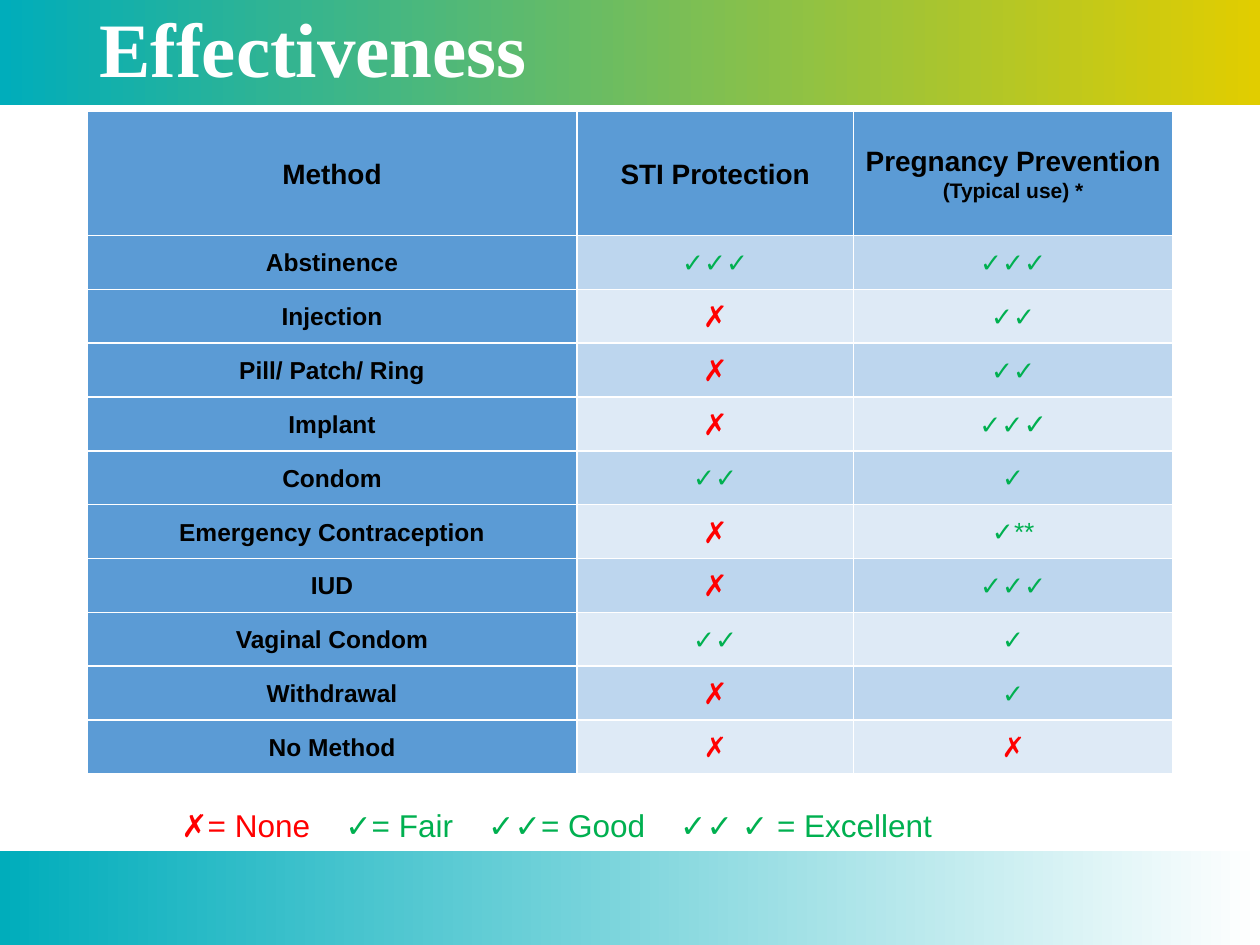
"""Build the Effectiveness slide: a table of methods rated by check marks and crosses."""
from dataclasses import dataclass

from lxml.etree import SubElement
from pptx import Presentation
from pptx.dml.color import RGBColor
from pptx.enum.shapes import MSO_SHAPE
from pptx.enum.text import MSO_ANCHOR, PP_ALIGN
from pptx.oxml.ns import qn
from pptx.slide import Slide
from pptx.table import _Cell as Cell
from pptx.text.text import _Paragraph as Paragraph
from pptx.util import Pt

TEAL = RGBColor(0x00, 0xAD, 0xBB)
GOLD = RGBColor(0xE1, 0xCD, 0x00)
WHITE = RGBColor(0xFF, 0xFF, 0xFF)
BLACK = RGBColor(0x00, 0x00, 0x00)
GREEN = RGBColor(0x00, 0xB0, 0x50)
RED = RGBColor(0xFF, 0x00, 0x00)
BLUE = RGBColor(0x5B, 0x9B, 0xD5)
BANDS = (RGBColor(0xBD, 0xD6, 0xEE), RGBColor(0xDE, 0xEA, 0xF6))

SLIDE_WIDTH, SLIDE_HEIGHT = 720, 540
TABLE_LEFT, TABLE_TOP = 49.7, 63.7
COLUMN_WIDTHS = (280.1, 157.9, 182.6)
HEADER_HEIGHT, ROW_HEIGHT = 70.9, 30.78
LEGEND_TABS = (93.7, 175.4, 285.1)


@dataclass(frozen=True)
class Span:
    text: str
    size: float
    color: RGBColor = BLACK
    bold: bool = False
    font: str = "Arial"


@dataclass(frozen=True)
class Band:
    top: float
    height: float
    start: RGBColor
    end: RGBColor


@dataclass(frozen=True)
class Method:
    name: str
    protection: tuple[Span, ...]
    prevention: tuple[Span, ...]


def checks(marks: str) -> tuple[Span, ...]:
    return (Span(marks, 15, GREEN),)


def cross(size: float = 17) -> tuple[Span, ...]:
    return (Span("✗", size, RED),)


BARS = (Band(0, 60, TEAL, GOLD), Band(486, 54, TEAL, WHITE))
HEADERS = (
    (Span("Method", 16, bold=True),),
    (Span("STI Protection", 16, bold=True),),
    (Span("Pregnancy Prevention\n", 16, bold=True),
     Span("(Typical use) *", 12, bold=True)),
)
METHODS = (
    Method("Abstinence", checks("✓✓✓"), checks("✓✓✓")),
    Method("Injection", cross(), checks("✓✓")),
    Method("Pill/ Patch/ Ring", cross(), checks("✓✓")),
    Method("Implant", cross(), checks("✓✓") + (Span("✓", 16, GREEN),)),
    Method("Condom", checks("✓✓"), checks("✓")),
    Method("Emergency Contraception", cross(), checks("✓**")),
    Method("IUD", cross(), checks("✓✓✓")),
    Method("Vaginal Condom", checks("✓✓"), checks("✓")),
    Method("Withdrawal", cross(), checks("✓")),
    Method("No Method", cross(16), cross(16)),
)
LEGEND = (
    Span("✗= None\t", 18, RED),
    Span("✓= Fair\t✓✓= Good\t✓✓ ✓ = Excellent", 18, GREEN),
)


def write_spans(paragraph: Paragraph, spans: tuple[Span, ...], spacing: float) -> None:
    paragraph.line_spacing = spacing
    for span in spans:
        run = paragraph.add_run()
        run.text = span.text.rstrip("\n")
        run.font.name = span.font
        run.font.size = Pt(span.size)
        run.font.bold = span.bold
        run.font.color.rgb = span.color
        if span.text.endswith("\n"):
            paragraph.add_line_break()


def draw_bar(slide: Slide, band: Band) -> None:
    bar = slide.shapes.add_shape(
        MSO_SHAPE.RECTANGLE, 0, Pt(band.top), Pt(SLIDE_WIDTH), Pt(band.height))
    bar.shadow.inherit = False
    bar.line.fill.background()
    bar.fill.gradient()
    bar.fill.gradient_angle = 0
    for stop, color in zip(bar.fill.gradient_stops, (band.start, band.end)):
        stop.color.rgb = color


def draw_title(slide: Slide) -> None:
    title = slide.shapes.add_textbox(Pt(49.7), 0, Pt(620.6), Pt(60)).text_frame
    title.word_wrap = True
    title.vertical_anchor = MSO_ANCHOR.MIDDLE
    heading = Span("Effectiveness", 44, WHITE, True, "Times New Roman")
    write_spans(title.paragraphs[0], (heading,), 0.9)


def outline_cell(cell: Cell) -> None:
    properties = cell._tc.get_or_add_tcPr()
    for side in ("a:lnL", "a:lnR", "a:lnT", "a:lnB"):
        border = SubElement(properties, qn(side), w=str(Pt(1)))
        paint = SubElement(border, qn("a:solidFill"))
        SubElement(paint, qn("a:srgbClr"), val=str(WHITE))


def fill_cell(cell: Cell, spans: tuple[Span, ...], color: RGBColor) -> None:
    outline_cell(cell)
    cell.fill.solid()
    cell.fill.fore_color.rgb = color
    cell.vertical_anchor = MSO_ANCHOR.MIDDLE
    cell.margin_left = cell.margin_right = Pt(2.9)
    cell.margin_top = cell.margin_bottom = 0
    line = cell.text_frame.paragraphs[0]
    line.alignment = PP_ALIGN.CENTER
    write_spans(line, spans, 1.07)


def draw_ratings(slide: Slide) -> None:
    heights = (HEADER_HEIGHT,) + (ROW_HEIGHT,) * len(METHODS)
    ratings = slide.shapes.add_table(
        len(heights), len(COLUMN_WIDTHS), Pt(TABLE_LEFT), Pt(TABLE_TOP),
        Pt(sum(COLUMN_WIDTHS)), Pt(sum(heights))).table
    ratings.first_row = ratings.horz_banding = False
    for column, width in zip(ratings.columns, COLUMN_WIDTHS):
        column.width = Pt(width)
    for row, height in zip(ratings.rows, heights):
        row.height = Pt(height)
    for index, header in enumerate(HEADERS):
        fill_cell(ratings.cell(0, index), header, BLUE)
    for index, method in enumerate(METHODS):
        name = (Span(method.name, 14, bold=True),)
        band = BANDS[index % 2]
        fill_cell(ratings.cell(index + 1, 0), name, BLUE)
        fill_cell(ratings.cell(index + 1, 1), method.protection, band)
        fill_cell(ratings.cell(index + 1, 2), method.prevention, band)


def draw_legend(slide: Slide) -> None:
    legend = slide.shapes.add_textbox(Pt(92.9), Pt(455.8), Pt(450), Pt(31)).text_frame
    legend.word_wrap = True
    legend.margin_left = Pt(10.7)
    key = legend.paragraphs[0]
    tabs = SubElement(key._p.get_or_add_pPr(), qn("a:tabLst"))
    for position in LEGEND_TABS:
        SubElement(tabs, qn("a:tab"), pos=str(Pt(position)), algn="l")
    write_spans(key, LEGEND, 1.07)


def main() -> None:
    deck = Presentation()
    deck.slide_width, deck.slide_height = Pt(SLIDE_WIDTH), Pt(SLIDE_HEIGHT)
    slide = deck.slides.add_slide(deck.slide_layouts[6])
    for band in BARS:
        draw_bar(slide, band)
    draw_title(slide)
    draw_ratings(slide)
    draw_legend(slide)
    deck.save("out.pptx")


if __name__ == "__main__":
    main()
